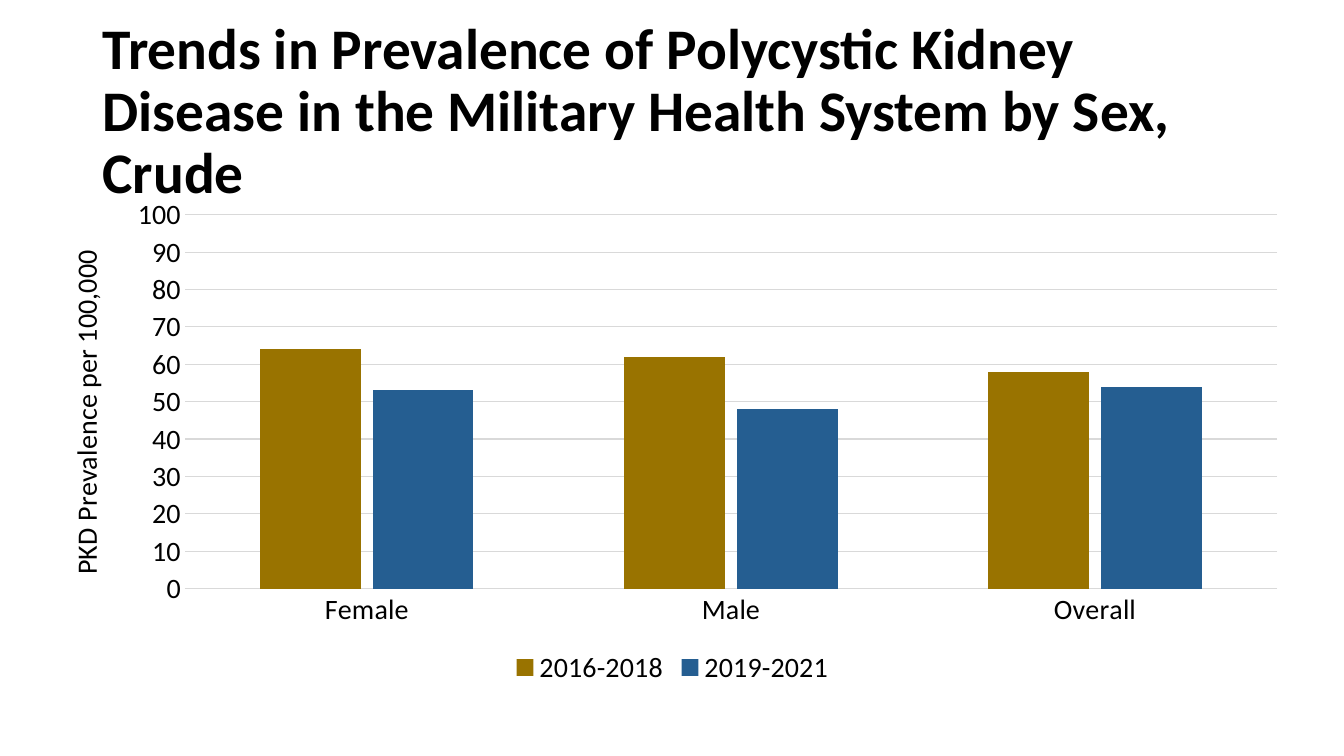
"""Build a slide with a clustered column chart of kidney disease prevalence by sex."""
from lxml import etree
from pptx import Presentation
from pptx.chart.data import CategoryChartData
from pptx.dml.color import RGBColor
from pptx.enum.chart import XL_CHART_TYPE as ChartType, XL_LEGEND_POSITION as LegendPos
from pptx.enum.chart import XL_TICK_MARK as Tick
from pptx.enum.text import MSO_ANCHOR, MSO_AUTO_SIZE, PP_ALIGN
from pptx.oxml import parse_xml
from pptx.oxml.ns import nsdecls, qn
from pptx.util import Cm, Pt

COLORS = {"text": "000000", "grid": "D9D9D9", "2016-2018": "997300", "2019-2021": "255E91"}
PREVALENCE = {"2016-2018": (64, 62, 58), "2019-2021": (53, 48, 54)}
PLOT_LAYOUT = {"x": 0.113, "y": 0.056, "w": 0.867, "h": 0.742}


def rgb(name):
    return RGBColor.from_string(COLORS[name])


def write(tf, text, size=20, bold=False, align=None, spacing=None):
    p = tf.paragraphs[0]
    p.alignment = align
    p.line_spacing = spacing
    r = p.add_run()
    r.text = text
    r.font.name = "Calibri"
    r.font.size = Pt(size)
    r.font.bold = bold
    r.font.color.rgb = rgb("text")


prs = Presentation()
prs.slide_width, prs.slide_height = Cm(33.87), Cm(19.05)
s = prs.slides.add_slide(prs.slide_layouts[5])

title = s.shapes.title
title.left, title.top, title.width, title.height = Cm(2.33), Cm(1.01), Cm(29.21), Cm(3.68)
tf = title.text_frame
tf.word_wrap = True
tf.auto_size = MSO_AUTO_SIZE.NONE
tf.vertical_anchor = MSO_ANCHOR.MIDDLE
write(tf, "Trends in Prevalence of Polycystic Kidney Disease in the Military Health System by Sex, Crude",
      size=41, bold=True, align=PP_ALIGN.LEFT, spacing=0.9)

data = CategoryChartData()
data.categories = ["Female", "Male", "Overall"]
for period, values in PREVALENCE.items():
    data.add_series(period, values)
chart = s.shapes.add_chart(ChartType.COLUMN_CLUSTERED, Cm(1.07), Cm(4.7), Cm(31.75), Cm(12.7), data).chart
chart.has_title = False
chart.font.name = "Calibri"
chart.font.size = Pt(20)
chart.font.color.rgb = rgb("text")

plot = chart.plots[0]
plot.vary_by_categories = False
plot.gap_width = 150
plot.overlap = -12
for series in plot.series:
    series.format.fill.solid()
    series.format.fill.fore_color.rgb = rgb(series.name)

cat_axis, val_axis = chart.category_axis, chart.value_axis
for axis in (cat_axis, val_axis):
    axis.major_tick_mark = axis.minor_tick_mark = Tick.NONE
for line in (cat_axis.format.line, val_axis.major_gridlines.format.line):
    line.color.rgb = rgb("grid")
    line.width = Pt(0.75)
val_axis.format.line.fill.background()
val_axis.minimum_scale, val_axis.maximum_scale, val_axis.major_unit = 0, 100, 10
write(val_axis.axis_title.text_frame, "PKD Prevalence per 100,000")

chart.has_legend = True
chart.legend.position = LegendPos.BOTTOM
chart.legend.include_in_layout = False

plot_area = chart.element.find(".//" + qn("c:plotArea"))
for old in plot_area.findall(qn("c:layout")):
    plot_area.remove(old)
layout = parse_xml(f'<c:layout {nsdecls("c")}><c:manualLayout><c:layoutTarget val="inner"/>'
                   '<c:xMode val="edge"/><c:yMode val="edge"/></c:manualLayout></c:layout>')
for side, share in PLOT_LAYOUT.items():
    etree.SubElement(layout[0], qn(f"c:{side}")).set("val", str(share))
plot_area.insert(0, layout)

prs.save("out.pptx")
